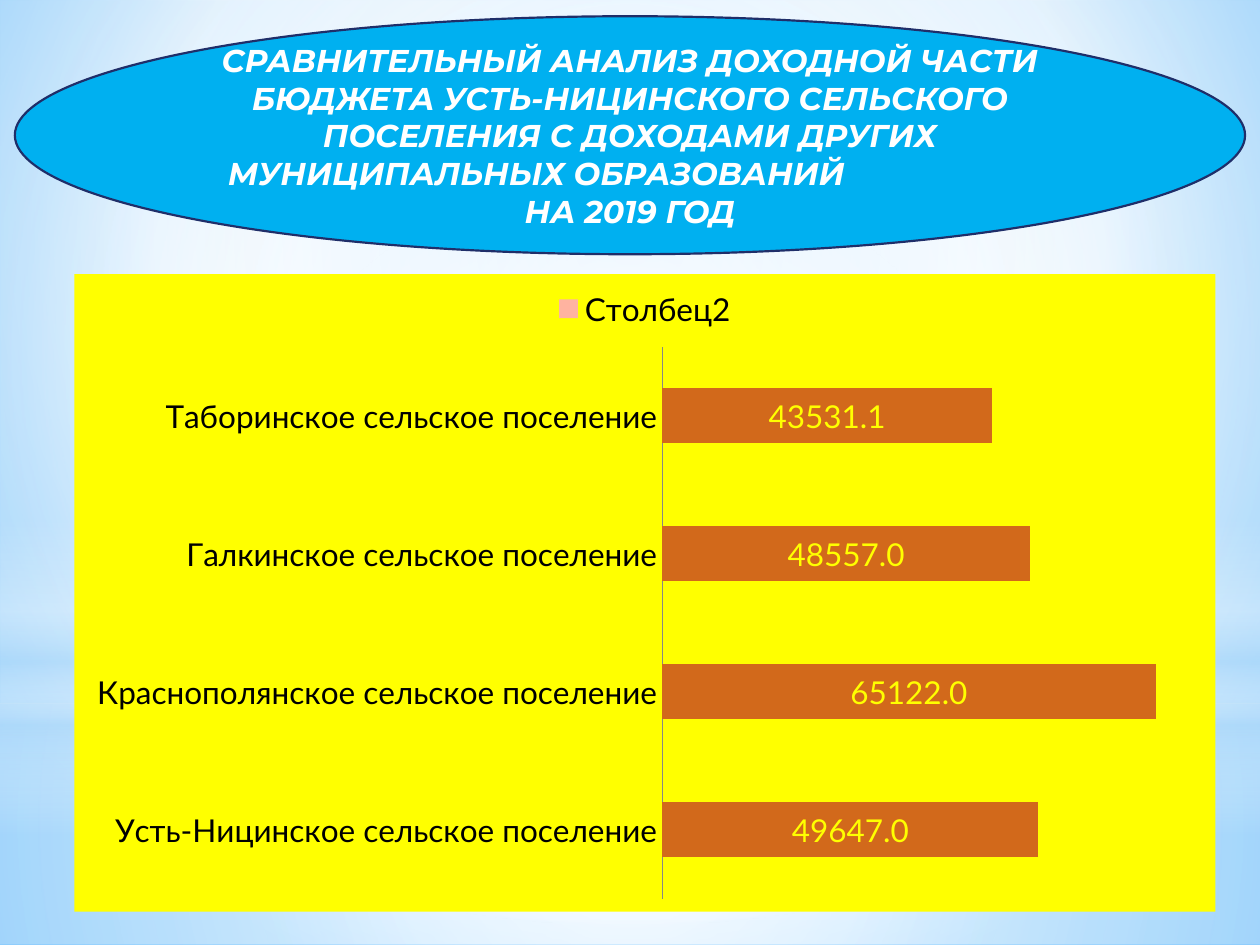
from lxml import etree
from pptx import Presentation
from pptx.chart.data import CategoryChartData
from pptx.dml.color import RGBColor
from pptx.enum.chart import XL_CHART_TYPE, XL_LABEL_POSITION, XL_LEGEND_POSITION, XL_TICK_LABEL_POSITION, XL_TICK_MARK
from pptx.enum.shapes import MSO_SHAPE
from pptx.enum.text import MSO_ANCHOR, PP_ALIGN
from pptx.oxml.ns import qn
from pptx.util import Pt

RECTANGLE, OVAL = MSO_SHAPE.RECTANGLE, MSO_SHAPE.OVAL
CENTER, MIDDLE = PP_ALIGN.CENTER, MSO_ANCHOR.MIDDLE
STACKED_BARS = XL_CHART_TYPE.BAR_STACKED
TOP, NO_TICK = XL_LEGEND_POSITION.TOP, XL_TICK_MARK.NONE
BESIDE_AXIS, LABEL_CENTER = XL_TICK_LABEL_POSITION.NEXT_TO_AXIS, XL_LABEL_POSITION.CENTER

COLORS = {
    "white": "FFFFFF", "sky": "9ED5FF", "azure": "5BB9FF", "mist": "B4DCFA",
    "banner": "00B0F0", "navy": "1F2E69", "yellow": "FFFF00",
    "bar": "D2691B", "lime": "A7EA52", "legend": "FFB3A0",
    "black": "000000", "axis": "878787",
}
CENTERED = (50, 50, 50, 50)
BACKDROP = [(0, "sky", 100), (60, "white", 100), (100, "azure", 100)]
GLOWS = [
    (RECTANGLE, (0, 402, 720, 138), CENTERED,
     [(0, "white", 91), (37, "white", 76), (100, "mist", 79)]),
    (RECTANGLE, (0, 0, 720, 402), CENTERED,
     [(0, "white", 89), (48, "white", 62), (100, "mist", 79)]),
    (RECTANGLE, (0, 297, 720, 180), None,
     [(0, "white", 0), (29, "white", 30), (45, "mist", 40),
      (55, "white", 26), (65, "mist", 60), (100, "white", 0)]),
    (OVAL, (0, 126, 720, 402), CENTERED,
     [(0, "white", 100), (56, "white", 0)]),
]
TITLE = [
    ("СРАВНИТЕЛЬНЫЙ АНАЛИЗ ДОХОДНОЙ ЧАСТИ БЮДЖЕТА УСТЬ-НИЦИНСКОГО "
     "СЕЛЬСКОГО ПОСЕЛЕНИЯ С ДОХОДАМИ ДРУГИХ", 0),
    ("МУНИЦИПАЛЬНЫХ ОБРАЗОВАНИЙ", 107),
    ("НА 2019 ГОД", 0),
]
INCOMES = {
    "Усть-Ницинское сельское поселение": 49647,
    "Краснополянское сельское поселение": 65122,
    "Галкинское сельское поселение": 48557,
    "Таборинское сельское поселение": 43531.1,
}
UNFILLED = [None] * len(INCOMES)
SERIES = [
    ("Ряд 1", "bar", list(INCOMES.values())),
    ("Столбец1", "lime", UNFILLED),
    ("Столбец2", "legend", UNFILLED),
]
HIDDEN_LEGEND_ENTRIES = (1, 2)


def rgb(name):
    return RGBColor.from_string(COLORS[name])


def paint(fill, color):
    fill.solid()
    fill.fore_color.rgb = rgb(color)


def apply_format(target, values):
    for key, value in values.items():
        setattr(target, key, value)


def set_gradient(fill, holder, stops, focus):
    fill.gradient()
    gradient = holder.find(qn("a:gradFill"))
    for child in list(gradient):
        gradient.remove(child)
    stop_list = etree.SubElement(gradient, qn("a:gsLst"))
    for position, color, opacity in stops:
        stop = etree.SubElement(stop_list, qn("a:gs"), pos=str(position * 1000))
        tone = etree.SubElement(stop, qn("a:srgbClr"), val=COLORS[color])
        if opacity < 100:
            etree.SubElement(tone, qn("a:alpha"), val=str(opacity * 1000))
    if focus:
        circle = etree.SubElement(gradient, qn("a:path"))
        circle.set("path", "circle")
        edges = {side: str(edge * 1000) for side, edge in zip("ltrb", focus)}
        etree.SubElement(circle, qn("a:fillToRect"), edges)
    else:
        etree.SubElement(gradient, qn("a:lin"), ang="5400000", scaled="0")


def add_panel(slide, outline, box):
    panel = slide.shapes.add_shape(outline, *map(Pt, box))
    panel.shadow.inherit = False
    return panel


def add_backdrop(slide):
    backdrop = slide.background.fill
    backdrop.solid()
    set_gradient(backdrop, slide.element.cSld.bg.bgPr, BACKDROP, (20, 10, 20, 60))
    for outline, box, focus, stops in GLOWS:
        glow = add_panel(slide, outline, box)
        glow.line.fill.background()
        set_gradient(glow.fill, glow.element.spPr, stops, focus)


def add_title(slide):
    banner = add_panel(slide, OVAL, (8.5, 9.3, 703, 136))
    paint(banner.fill, "banner")
    paint(banner.line.fill, "navy")
    banner.line.width = Pt(1.25)
    frame = banner.text_frame
    apply_format(frame, {"word_wrap": True, "vertical_anchor": MIDDLE})
    for index, (wording, right_indent) in enumerate(TITLE):
        line = frame.add_paragraph() if index else frame.paragraphs[0]
        line.alignment = CENTER
        line._p.get_or_add_pPr().set("marR", str(Pt(right_indent)))
        run = line.add_run()
        run.text = wording
        apply_format(run.font, {"name": "Montserrat", "size": Pt(18),
                                "bold": True, "italic": True})
        run.font.color.rgb = rgb("white")


def add_income_chart(slide):
    data = CategoryChartData(number_format="0.0")
    data.categories = list(INCOMES)
    for name, _, values in SERIES:
        data.add_series(name, values)
    box = map(Pt, (42.5, 156.7, 652, 364.3))
    chart = slide.shapes.add_chart(STACKED_BARS, *box, data).chart
    apply_format(chart, {"has_title": False, "has_legend": True})
    apply_format(chart.font, {"name": "Lato", "size": Pt(18)})
    chart.font.color.rgb = rgb("black")

    area = etree.Element(qn("c:spPr"))
    area_fill = etree.SubElement(area, qn("a:solidFill"))
    etree.SubElement(area_fill, qn("a:srgbClr"), val=COLORS["yellow"])
    border = etree.SubElement(area, qn("a:ln"))
    etree.SubElement(border, qn("a:noFill"))
    chart.element.find(qn("c:chart")).addnext(area)

    apply_format(chart.legend, {"position": TOP, "include_in_layout": False})
    legend_position = chart.legend._element.find(qn("c:legendPos"))
    for index in reversed(HIDDEN_LEGEND_ENTRIES):
        entry = etree.Element(qn("c:legendEntry"))
        etree.SubElement(entry, qn("c:idx"), val=str(index))
        etree.SubElement(entry, qn("c:delete"), val="1")
        legend_position.addnext(entry)

    apply_format(chart.category_axis, {
        "major_tick_mark": NO_TICK, "minor_tick_mark": NO_TICK,
        "tick_label_position": BESIDE_AXIS, "has_major_gridlines": False})
    paint(chart.category_axis.format.line.fill, "axis")
    apply_format(chart.value_axis, {
        "visible": False, "has_major_gridlines": False,
        "major_tick_mark": NO_TICK, "minor_tick_mark": NO_TICK,
        "minimum_scale": 0, "maximum_scale": 70000})

    plot = chart.plots[0]
    apply_format(plot, {"gap_width": 150, "overlap": 100, "vary_by_categories": False})
    for series, (_, color, _) in zip(plot.series, SERIES):
        paint(series.format.fill, color)
        labels = series.data_labels
        apply_format(labels, {
            "show_value": True, "number_format": "0.0",
            "number_format_is_linked": False, "position": LABEL_CENTER})
        labels.font.size = Pt(18)
        labels.font.color.rgb = rgb("yellow")


def main():
    deck = Presentation()
    apply_format(deck, {"slide_width": Pt(720), "slide_height": Pt(540)})
    slide = deck.slides.add_slide(deck.slide_layouts[6])
    add_backdrop(slide)
    add_income_chart(slide)
    add_title(slide)
    deck.save("out.pptx")


if __name__ == "__main__":
    main()
